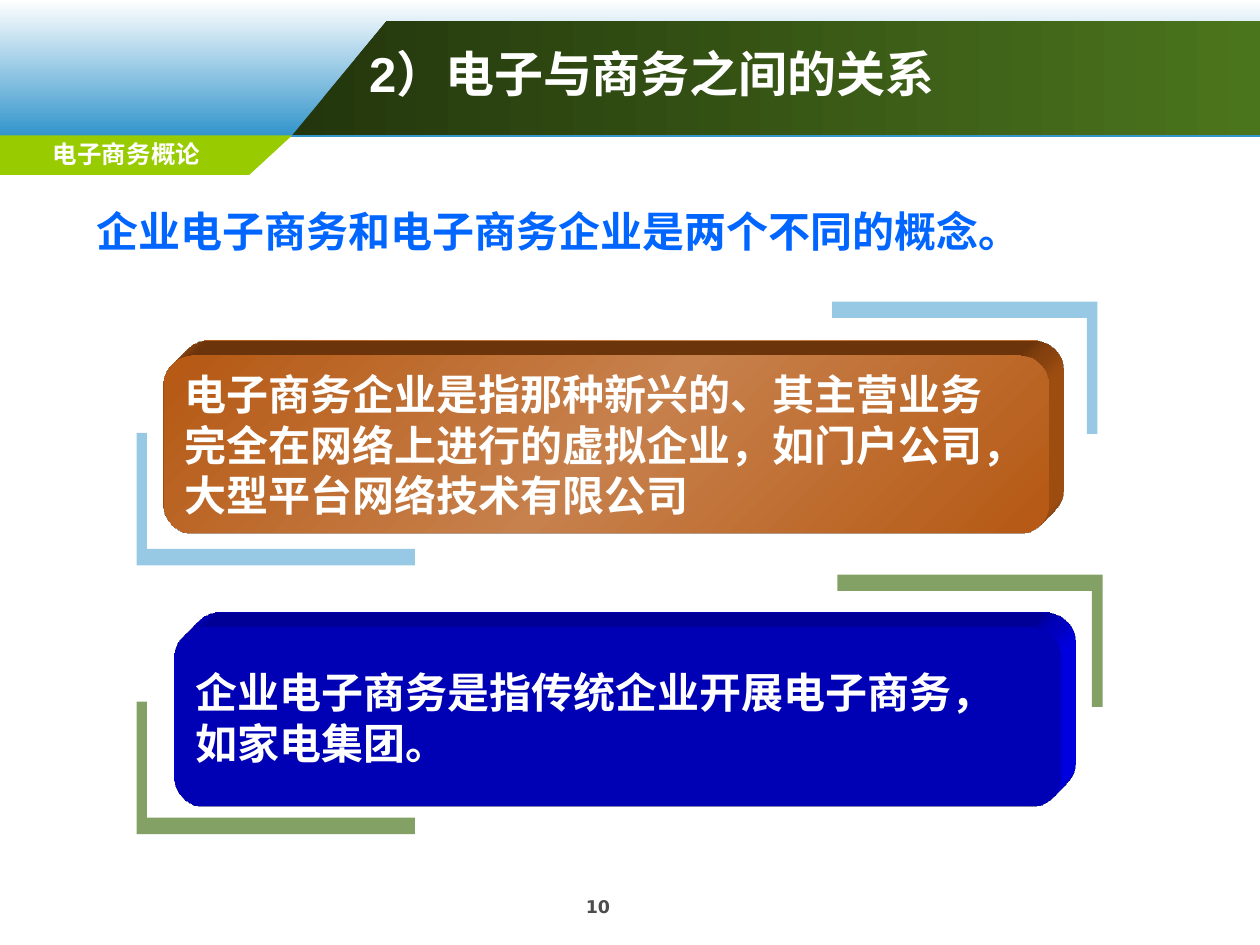
from dataclasses import dataclass

from pptx import Presentation
from pptx.dml.color import RGBColor
from pptx.enum.shapes import MSO_SHAPE
from pptx.enum.text import MSO_ANCHOR, PP_ALIGN
from pptx.oxml import parse_xml
from pptx.oxml.ns import nsdecls, qn
from pptx.util import Pt

WHITE = RGBColor(0xFF, 0xFF, 0xFF)
SKY = RGBColor(0x31, 0x94, 0xCB)
PINE = RGBColor(0x23, 0x36, 0x0D)
LEAF = RGBColor(0x4B, 0x75, 0x1D)
LIME = RGBColor(0x99, 0xCC, 0x00)
GRAY = RGBColor(0x4D, 0x4D, 0x4D)
RUST = RGBColor(0xB5, 0x58, 0x13)
SAND = RGBColor(0xC7, 0x81, 0x4C)
BLUE = RGBColor(0x00, 0x00, 0xFF)
AZURE = RGBColor(0x00, 0x66, 0xFF)

SIDE, FOOT, RISE = 6, 9.4, 75.6  # bracket bar widths and height
BOX_W, BOX_H, DEPTH = 506, 102, 24


@dataclass
class Label:
    text: str
    left: float
    top: float
    width: float
    height: float
    size: float
    color: RGBColor
    font: str = "Arial"
    align: PP_ALIGN = PP_ALIGN.LEFT
    anchor: MSO_ANCHOR = MSO_ANCHOR.TOP
    hang: float = 0


@dataclass
class Card:
    lines: list[str]
    left: float
    top: float
    colors: list[RGBColor]
    tint: RGBColor
    alpha: int
    low: tuple[float, float]  # bottom-left corner of the lower bracket
    high: tuple[float, float]  # top-right corner of the upper bracket


LABELS = [
    Label("电子商务概论", 2.9, 75.6, 139, 22.3, 14, WHITE, "DejaVu Sans",
          PP_ALIGN.CENTER),
    Label("10", 257.8, 508.3, 167.8, 23.8, 10, GRAY, "DejaVu Sans",
          PP_ALIGN.CENTER),
    Label("2）电子与商务之间的关系", 203.8, 18, 496, 47.5, 28, WHITE,
          anchor=MSO_ANCHOR.MIDDLE),
    Label("企业电子商务和电子商务企业是两个不同的概念。", 48.2, 113.8, 570, 41.8,
          24, AZURE, hang=27),
]

CARDS = [
    Card(["电子商务企业是指那种新兴的、其主营业务",
          "完全在网络上进行的虚拟企业，如门户公司，",
          "大型平台网络技术有限公司"],
         93.4, 203, [RUST, SAND, RUST], SKY, 50, (78, 323), (627, 172.3)),
    Card(["企业电子商务是指传统企业开展电子商务，", "如家电集团。"],
         99.8, 358.8, [BLUE], LEAF, 68, (78, 476.6), (630, 328.3)),
]


def paint(shape, colors: list[RGBColor], angle: int = 0) -> None:
    """Fill with one colour, or with an evenly spaced gradient; no line."""
    shape.shadow.inherit = False
    shape.line.fill.background()
    if len(colors) == 1:
        shape.fill.solid()
        shape.fill.fore_color.rgb = colors[0]
        return
    shape.fill.gradient()
    grad = shape._element.spPr.find(qn("a:gradFill"))
    grad.clear()
    step = 100000 // (len(colors) - 1)
    stops = "".join(
        f'<a:gs pos="{i * step}"><a:srgbClr val="{color}"/></a:gs>'
        for i, color in enumerate(colors))
    grad.append(parse_xml(f'<a:gsLst {nsdecls("a")}>{stops}</a:gsLst>'))
    grad.append(parse_xml(
        f'<a:lin {nsdecls("a")} ang="{angle * 60000}" scaled="1"/>'))


def outline(shapes, points: list[tuple[float, float]]):
    first, *rest = [(Pt(x), Pt(y)) for x, y in points]
    pen = shapes.build_freeform(*first)
    pen.add_line_segments(rest, close=True)
    return pen.convert_to_shape()


def bracket(shapes, corner: tuple[float, float], width: float, sign: int,
            card: Card) -> None:
    """Draw an L from its corner; sign 1 opens up-right, -1 down-left."""
    x, y = corner
    steps = [(0, 0), (width, 0), (width, FOOT), (SIDE, FOOT), (SIDE, RISE),
             (0, RISE)]
    shape = outline(shapes, [(x + sign * a, y - sign * b) for a, b in steps])
    paint(shape, [card.tint])
    color = shape._element.spPr.find(qn("a:solidFill"))[0]
    color.append(parse_xml(
        f'<a:alpha {nsdecls("a")} val="{card.alpha * 1000}"/>'))


def extrude(shape, color: RGBColor) -> None:
    props = shape._element.spPr
    props.append(parse_xml(
        f'<a:scene3d {nsdecls("a")}><a:camera prst="legacyObliqueTopRight"/>'
        '<a:lightRig rig="legacyFlat3" dir="b"/></a:scene3d>'))
    props.append(parse_xml(
        f'<a:sp3d {nsdecls("a")} extrusionH="{Pt(DEPTH)}" '
        'prstMaterial="legacyMatte"><a:extrusionClr>'
        f'<a:srgbClr val="{color}"/></a:extrusionClr></a:sp3d>'))


def write(para, text: str, size: float, color: RGBColor, name: str,
          align: PP_ALIGN) -> None:
    para.text = text
    para.alignment = align
    font = para.font
    font.size, font.bold, font.name = Pt(size), True, name
    font.color.rgb = color


def add_label(shapes, label: Label) -> None:
    box = shapes.add_textbox(Pt(label.left), Pt(label.top), Pt(label.width),
                             Pt(label.height))
    frame = box.text_frame
    frame.word_wrap = True
    frame.vertical_anchor = label.anchor
    para = frame.paragraphs[0]
    write(para, label.text, label.size, label.color, label.font, label.align)
    if label.hang:
        props = para._p.get_or_add_pPr()
        props.set("marL", str(Pt(label.hang)))
        props.set("indent", str(-Pt(label.hang)))


def add_card(shapes, card: Card) -> None:
    bracket(shapes, card.low, 159, 1, card)
    bracket(shapes, card.high, 151.5, -1, card)
    box = shapes.add_shape(MSO_SHAPE.ROUNDED_RECTANGLE, Pt(card.left),
                           Pt(card.top), Pt(BOX_W), Pt(BOX_H))
    paint(box, card.colors, 45)
    extrude(box, card.colors[0])
    frame = box.text_frame
    frame.word_wrap = False
    frame.vertical_anchor = MSO_ANCHOR.MIDDLE
    for i, line in enumerate(card.lines):
        para = frame.add_paragraph() if i else frame.paragraphs[0]
        write(para, line, 24, WHITE, "Arial", PP_ALIGN.LEFT)


def add_header(shapes) -> None:
    sky = shapes.add_shape(MSO_SHAPE.RECTANGLE, 0, 0, Pt(720), Pt(78.4))
    paint(sky, [WHITE, SKY], 90)
    band = outline(shapes, [(167, 77.3), (720, 77.3), (720, 12), (221, 12)])
    paint(band, [PINE, LEAF])
    tab = outline(shapes, [(0, 77.3), (167, 77.3), (142.4, 100), (0, 100)])
    paint(tab, [LIME])


def main() -> None:
    deck = Presentation()
    deck.slide_width, deck.slide_height = Pt(720), Pt(540)
    shapes = deck.slides.add_slide(deck.slide_layouts[6]).shapes
    add_header(shapes)
    for card in CARDS:
        add_card(shapes, card)
    for label in LABELS:
        add_label(shapes, label)
    deck.save("out.pptx")


if __name__ == "__main__":
    main()
